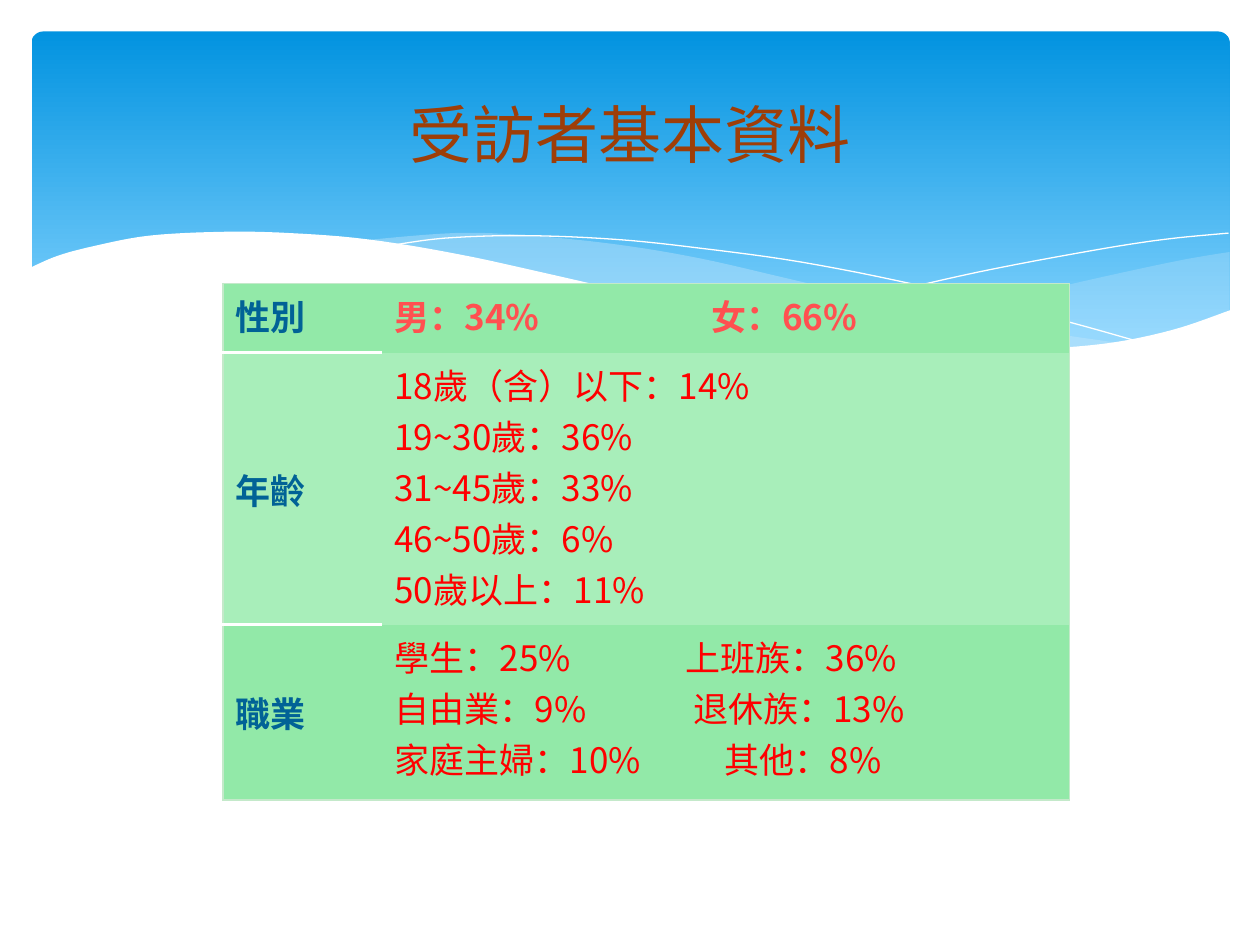
from lxml import etree
from pptx import Presentation
from pptx.dml.color import RGBColor
from pptx.enum.shapes import MSO_SHAPE
from pptx.enum.text import MSO_ANCHOR, PP_ALIGN
from pptx.oxml.ns import qn
from pptx.util import Inches, Pt

ROUNDED = MSO_SHAPE.ROUNDED_RECTANGLE
MIDDLE, TOP = MSO_ANCHOR.MIDDLE, MSO_ANCHOR.TOP
CENTER, JUSTIFY, LEFT = PP_ALIGN.CENTER, PP_ALIGN.JUSTIFY, PP_ALIGN.LEFT
FONT = "Noto Sans CJK SC"
NO_TABLE_STYLE = "{2D5ABB26-0587-4C30-8999-92F81FD0307C}"

TITLE = "受訪者基本資料"
# label, anchor of the label, answer colour, bold answers, row colour, height,
# answers as (text, tab position in inches)
ROWS = [
    ("性別", TOP, "FF5050", True, "92E9A8", 0.55,
     [("男：34%\t女：66%", 2.52)]),
    ("年齡", MIDDLE, "FF0000", False, "A8EEBA", 2.16,
     [("18歲（含）以下：14%", None), ("19~30歲：36%", None),
      ("31~45歲：33%", None), ("46~50歲：6%", None),
      ("50歲以上：11%", None)]),
    ("職業", MIDDLE, "FF0000", False, "92E9A8", 1.39,
     [("學生：25%\t上班族：36%", 2.31), ("自由業：9%\t退休族：13%", 2.37),
      ("家庭主婦：10%\t其他：8%", 2.62)]),
]
COLUMN_WIDTHS = [1.26, 5.46]
EDGE, DIVIDER = ("C4E9CA", 0.75), ("FFFFFF", 2)

# Each wave is a list of smooth curves joined by straight sides:
# curves, fill, fill opacity in percent (no fill means a white hairline)
WAVES = [
    ([[(9.76, 2), (9.35, 2.07), (8.61, 2.23), (7.53, 2.48), (6.61, 2.65)],
      [(6.61, 2.65), (7.19, 2.72), (7.69, 2.77), (8.24, 2.77),
       (8.81, 2.73), (9.28, 2.63), (9.76, 2.47)]], "C6E7FC", 29),
    ([[(8.93, 2.73), (8.07, 2.6), (7.06, 2.4), (6.29, 2.22), (5.55, 2.05),
       (4.89, 1.94), (4.2, 1.87), (3.61, 1.85), (2.86, 1.91)],
      [(2.86, 1.91), (3.62, 2.03), (4.49, 2.22), (5.3, 2.4), (6.01, 2.55),
       (6.8, 2.68), (7.48, 2.76), (8.07, 2.78), (8.57, 2.77),
       (8.93, 2.73)]], "C6E7FC", 40),
    ([[(3.09, 1.95), (3.53, 1.89), (4.16, 1.87), (4.89, 1.9), (5.56, 1.97),
       (6.36, 2.08), (7.27, 2.26), (8.31, 2.51), (9.07, 2.72)]], None, 0),
    ([[(6.13, 2.57), (6.95, 2.35), (7.76, 2.16), (8.66, 1.99), (9.24, 1.9),
       (9.75, 1.85)]], None, 0),
    ([[(9.77, 2.46), (9.3, 2.62), (8.75, 2.73), (8.09, 2.77), (7.44, 2.74),
       (6.68, 2.65), (5.79, 2.5), (4.47, 2.2), (3.65, 2.02), (2.92, 1.9),
       (2.3, 1.85), (1.77, 1.84), (1.19, 1.87), (0.76, 1.95), (0.46, 2.03),
       (0.23, 2.13)],
      [(0.23, 3.29), (9.77, 3.29)]], "FFFFFF", 100),
]


def color(value):
    return RGBColor.from_string(value)


def smooth(points, steps=6):
    """Return a Catmull-Rom curve through the points."""
    padded = [points[0], *points, points[-1]]
    curve = [points[0]]
    for a, b, c, d in zip(padded, padded[1:], padded[2:], padded[3:]):
        for step in range(1, steps + 1):
            t = step / steps
            curve.append(tuple(
                q + 0.5 * t * (r - p + t * (2 * p - 5 * q + 4 * r - s
                                            + t * (3 * (q - r) + s - p)))
                for p, q, r, s in zip(a, b, c, d)))
    return curve


def add_wave(slide, curves, fill, opacity):
    points = [(Inches(x), Inches(y))
              for curve in curves
              for x, y in (smooth(curve) if len(curve) > 2 else curve)]
    builder = slide.shapes.build_freeform(*points[0])
    builder.add_line_segments(points[1:], close=fill is not None)
    shape = builder.convert_to_shape()
    shape.shadow.inherit = False
    if fill is None:
        shape.fill.background()
        shape.line.color.rgb = color("FFFFFF")
        shape.line.width = Pt(0)
        return
    shape.fill.solid()
    shape.fill.fore_color.rgb = color(fill)
    shape.line.fill.background()
    if opacity < 100:
        rgb = shape._element.spPr.find(qn("a:solidFill")).find(qn("a:srgbClr"))
        etree.SubElement(rgb, qn("a:alpha"), val=str(opacity * 1000))


def add_run(paragraph, text, size, ink, bold=False):
    run = paragraph.add_run()
    run.text = text
    run.font.size, run.font.bold, run.font.name = Pt(size), bold, FONT
    run.font.color.rgb = color(ink)
    latin = run._r.rPr.find(qn("a:latin"))
    latin.addnext(etree.Element(qn("a:ea"), typeface=FONT))


def add_tab_stop(paragraph, position):
    stops = etree.SubElement(paragraph._p.get_or_add_pPr(), qn("a:tabLst"))
    etree.SubElement(stops, qn("a:tab"), pos=str(Inches(position)), algn="l")


def set_borders(cell, borders):
    """Draw the given sides; they stand before the fill, in schema order."""
    properties = cell._tc.get_or_add_tcPr()
    sides = [side for side in "LRTB" if side in borders]
    for index, side in enumerate(sides):
        ink, width = borders[side]
        line = etree.Element(qn(f"a:ln{side}"), w=str(Pt(width)))
        solid = etree.SubElement(line, qn("a:solidFill"))
        etree.SubElement(solid, qn("a:srgbClr"), val=ink)
        properties.insert(index, line)


def cell_borders(row, column):
    borders = {"R" if column else "L": EDGE}
    if row == 0:
        borders["T"] = EDGE
    if row == len(ROWS) - 1:
        borders["B"] = EDGE
    if column == 0 and row < 2:
        borders["T" if row else "B"] = DIVIDER
    return borders


def add_answer_table(slide):
    heights = [row[5] for row in ROWS]
    frame = slide.shapes.add_table(
        len(ROWS), len(COLUMN_WIDTHS), Inches(1.77), Inches(2.25),
        Inches(sum(COLUMN_WIDTHS)), Inches(sum(heights)))
    table = frame.table
    table.first_row = table.horz_banding = False
    table._tbl.tblPr.find(qn("a:tableStyleId")).text = NO_TABLE_STYLE
    for column, width in zip(table.columns, COLUMN_WIDTHS):
        column.width = Inches(width)
    for index, (label, anchor, ink, bold, fill, height, answers) in enumerate(ROWS):
        table.rows[index].height = Inches(height)
        contents = [([(label, None)], anchor, JUSTIFY, "016296", True),
                    (answers, TOP, LEFT, ink, bold)]
        for column, (lines, position, align, text_ink, heavy) in enumerate(contents):
            cell = table.cell(index, column)
            cell.vertical_anchor = position
            cell.fill.solid()
            cell.fill.fore_color.rgb = color(fill)
            set_borders(cell, cell_borders(index, column))
            for number, (text, tab) in enumerate(lines):
                text_frame = cell.text_frame
                paragraph = (text_frame.add_paragraph() if number
                             else text_frame.paragraphs[0])
                paragraph.alignment = align
                if tab:
                    add_tab_stop(paragraph, tab)
                add_run(paragraph, text, 20, text_ink, heavy)


def add_banner(slide):
    banner = slide.shapes.add_shape(
        ROUNDED, Inches(0.25), Inches(0.25), Inches(9.51), Inches(2.7))
    banner.adjustments[0] = 0.034
    banner.shadow.inherit = False
    banner.line.fill.background()
    banner.fill.gradient()
    banner.fill.gradient_angle = 270
    stops = [(0, "0293E0"), (0.9, "83D3FE")]
    for stop, (position, ink) in zip(banner.fill.gradient_stops, stops):
        stop.position = position
        stop.color.rgb = color(ink)


def add_title(slide):
    box = slide.shapes.add_textbox(
        Inches(0.5), Inches(0.37), Inches(9), Inches(1.37))
    box.text_frame.word_wrap = True
    box.text_frame.vertical_anchor = MIDDLE
    paragraph = box.text_frame.paragraphs[0]
    paragraph.alignment = CENTER
    add_run(paragraph, TITLE, 36, "9E3E08")


def main():
    presentation = Presentation()
    presentation.slide_width, presentation.slide_height = Inches(10), Inches(7.5)
    slide = presentation.slides.add_slide(presentation.slide_layouts[6])
    add_banner(slide)
    for wave in WAVES:
        add_wave(slide, *wave)
    add_title(slide)
    add_answer_table(slide)
    presentation.save("out.pptx")


if __name__ == "__main__":
    main()
